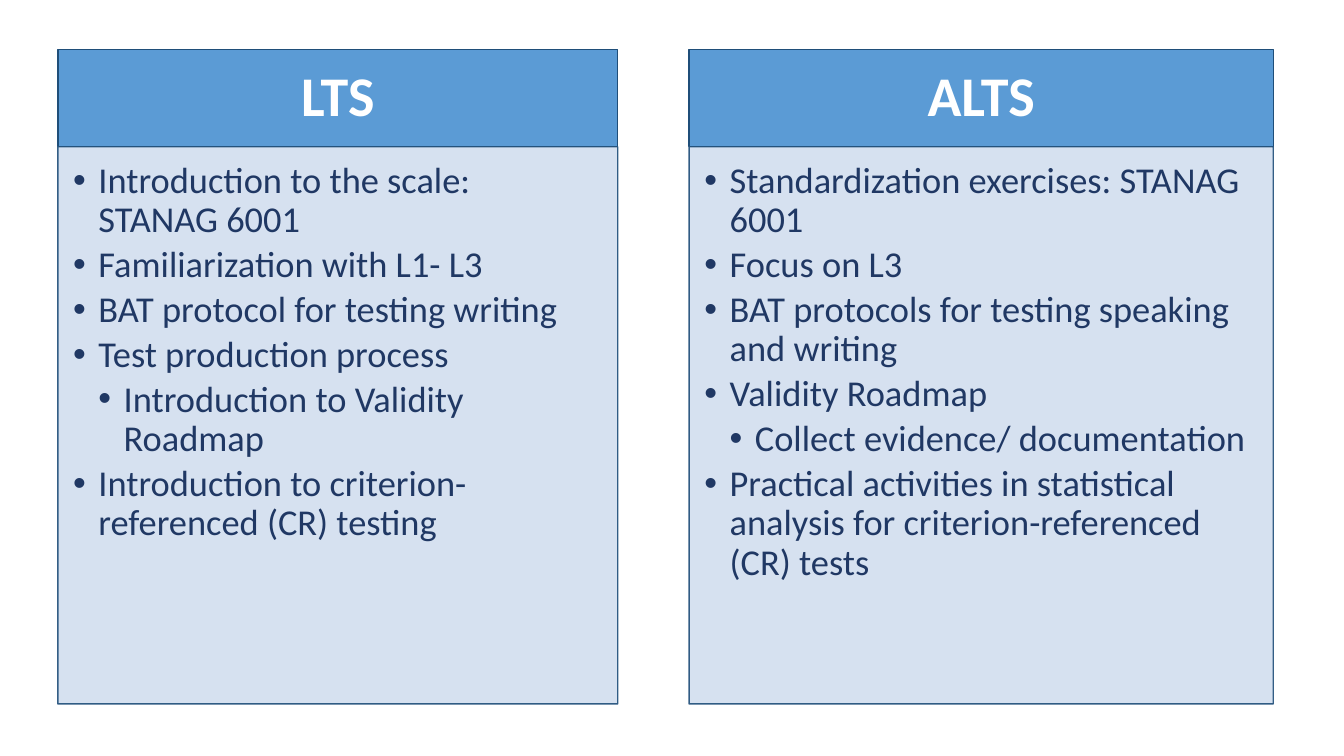
from lxml.etree import SubElement
from pptx import Presentation
from pptx.dml.color import RGBColor
from pptx.enum.text import MSO_ANCHOR, MSO_AUTO_SIZE, PP_ALIGN
from pptx.oxml.ns import qn
from pptx.util import Pt

BLUE, PALE, EDGE = "5B9BD5", "D2DEEF", "1F4E79"
NAVY, WHITE = "203864", "FFFFFF"
TOP, HEAD, BODY = 35.3, 69.5, 398
INDENT = 18

# Each column: left, width, heading, items as (level, text)
COLUMNS = [
    (41.3, 400, "LTS", [
        (0, "Introduction to the scale: STANAG 6001"),
        (0, "Familiarization with L1- L3"),
        (0, "BAT protocol for testing writing"),
        (0, "Test production process"),
        (1, "Introduction to Validity Roadmap"),
        (0, "Introduction to criterion-referenced (CR) testing"),
    ]),
    (492.2, 417.3, "ALTS", [
        (0, "Standardization exercises: STANAG 6001"),
        (0, "Focus on L3"),
        (0, "BAT protocols for testing speaking and writing"),
        (0, "Validity Roadmap"),
        (1, "Collect evidence/ documentation"),
        (0, "Practical activities in statistical analysis for "
            "criterion-referenced (CR) tests"),
    ]),
]


def color(code):
    return RGBColor.from_string(code)


def fade(fill):
    """Make a solid colour 90% opaque."""
    tint = fill.find(".//" + qn("a:srgbClr"))
    SubElement(tint, qn("a:alpha"), val="90000")


def panel(shape, box, fill, insets, anchor):
    """Place a placeholder in its box and style it as a filled panel."""
    shape.left, shape.top, shape.width, shape.height = map(Pt, box)
    shape.fill.solid()
    shape.fill.fore_color.rgb = color(fill)
    shape.line.color.rgb = color(EDGE)
    shape.line.width = Pt(1)
    frame = shape.text_frame
    frame.word_wrap = True
    frame.auto_size = MSO_AUTO_SIZE.NONE
    frame.vertical_anchor = anchor
    (frame.margin_left, frame.margin_top,
     frame.margin_right, frame.margin_bottom) = map(Pt, insets)
    return frame


def write(para, text, size, tone, bold, after):
    para.line_spacing = 0.9
    para.space_before = Pt(0)
    para.space_after = Pt(after)
    run = para.add_run()
    run.text = text
    font = run.font
    font.name, font.size, font.bold = "Calibri", Pt(size), bold
    font.color.rgb = color(tone)


def bullet(para, level):
    para.level = level
    props = para._p.get_or_add_pPr()
    props.set("marL", str(Pt(INDENT * (level + 1))))
    props.set("indent", str(-Pt(INDENT)))
    SubElement(props, qn("a:buFont"), typeface="Arial")
    SubElement(props, qn("a:buChar"), char="•")


def column(head, body, box, title, items):
    left, top, width, height = box

    # Heading band
    frame = panel(head, (left, top, width, HEAD), BLUE,
                  (22, 13, 22, 13), MSO_ANCHOR.MIDDLE)
    para = frame.paragraphs[0]
    para.alignment = PP_ALIGN.CENTER
    write(para, title, 40, WHITE, True, 0)

    # Bulleted list
    frame = panel(body, (left, top + HEAD, width, height - HEAD), PALE,
                  (11, 11, 14.5, 16.5), MSO_ANCHOR.TOP)
    for part in (body.fill._xPr.find(qn("a:solidFill")),
                 body.line._ln.find(qn("a:solidFill"))):
        fade(part)
    for place, (level, text) in enumerate(items):
        para = frame.add_paragraph() if place else frame.paragraphs[0]
        write(para, text, 26, NAVY, False, 4)
        bullet(para, level)


def main():
    deck = Presentation()
    deck.slide_width, deck.slide_height = Pt(960), Pt(540)

    # Comparison layout: two headings, each with a list
    slide = deck.slides.add_slide(deck.slide_layouts[4])
    title = slide.shapes.title._element
    title.getparent().remove(title)
    slots = {s.placeholder_format.idx: s for s in slide.placeholders}

    for place, (left, width, name, items) in enumerate(COLUMNS):
        first = 1 + 2 * place
        column(slots[first], slots[first + 1],
               (left, TOP, width, HEAD + BODY), name, items)

    deck.save("out.pptx")


if __name__ == "__main__":
    main()
